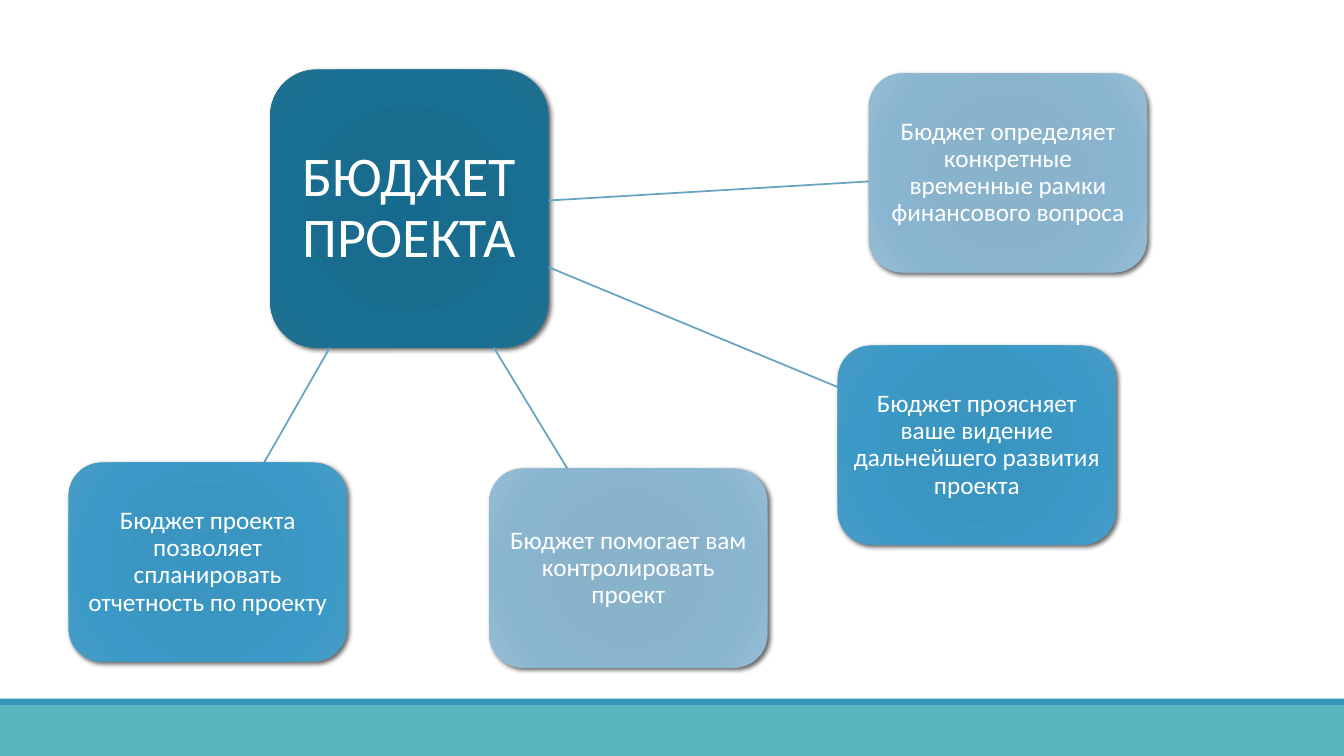
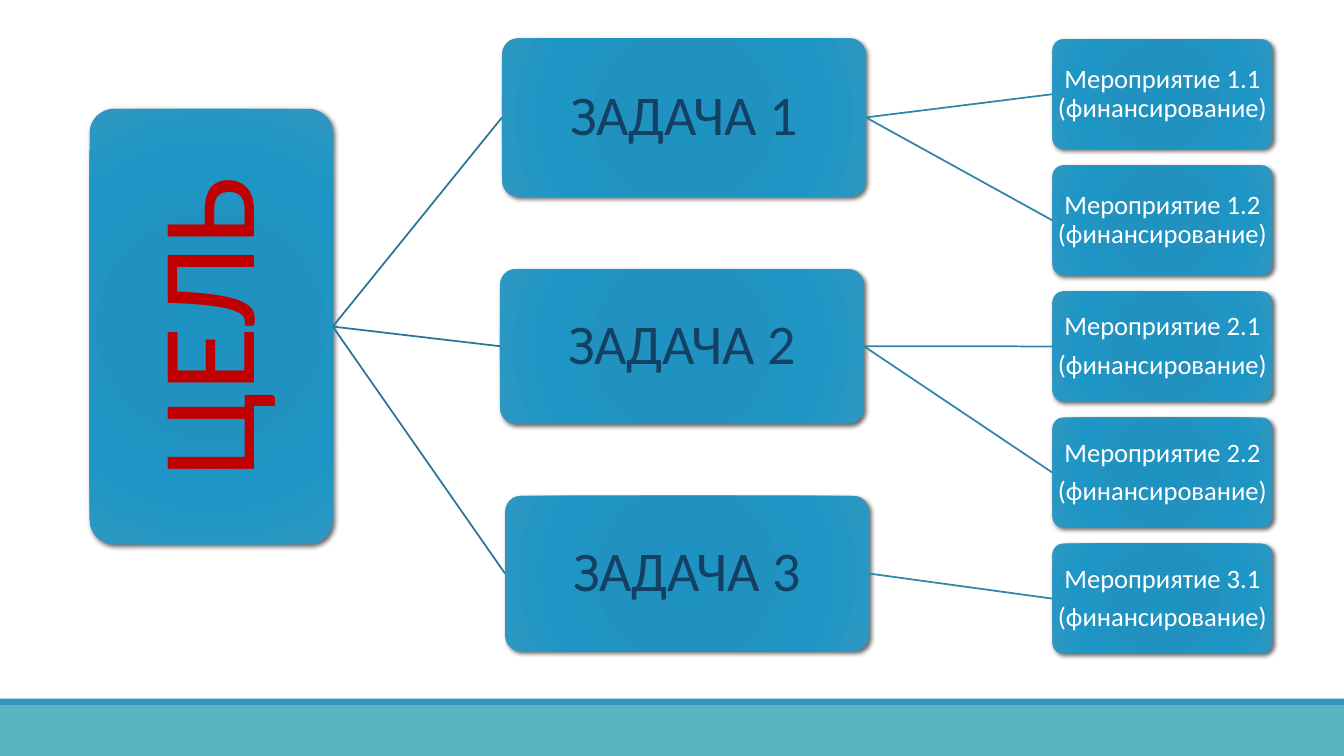
from lxml import etree
from pptx import Presentation
from pptx.dml.color import RGBColor
from pptx.enum.shapes import MSO_CONNECTOR as Link, MSO_SHAPE as Shape
from pptx.enum.text import MSO_ANCHOR as Anchor, PP_ALIGN as Align
from pptx.oxml import parse_xml
from pptx.oxml.ns import nsdecls, qn
from pptx.util import Inches, Pt

FONT = "Calibri"
WHITE = RGBColor(0xFF, 0xFF, 0xFF)
RED = RGBColor(0xC0, 0x00, 0x00)
NAVY = RGBColor(0x13, 0x41, 0x63)
TEAL = RGBColor(0x58, 0xB6, 0xC0)
STRIPE = RGBColor(0x34, 0x94, 0xBA)
PALE_LINE = RGBColor(0x67, 0xA3, 0xC2)
GOAL_LINE = RGBColor(0x2A, 0x77, 0x95)
TASK_LINE = RGBColor(0x2F, 0x86, 0xA9)

STOPS = (0, 34, 70, 100)
DEEP = [RGBColor.from_string(c) for c in ("166C8E", "196C8D", "176F92", "22708F")]
BLUE = [RGBColor.from_string(c) for c in ("3895C2", "3B95C1", "3A99C7", "489CC5")]
PALE = [RGBColor.from_string(c) for c in ("86B1CB", "89B2CB", "89B5D0", "96BCD4")]
TREE = [RGBColor.from_string(c) for c in ("1E92C0", "2192BF", "1E96C5", "2D97C1")]

deck = Presentation()
deck.slide_width, deck.slide_height = Inches(13.33), Inches(7.5)
COL, ROW = deck.slide_width / 100, deck.slide_height / 100


def add_card(slide, place, shades, paragraphs, size, color, inset, corner=1 / 6):
    left, top, width, height = place
    card = slide.shapes.add_shape(Shape.ROUNDED_RECTANGLE, int(left * COL), int(top * ROW),
                                  int(width * COL), int(height * ROW))
    card.adjustments[0] = corner
    card.line.fill.background()
    card.shadow.inherit = False
    stops = "".join(f'<a:gs pos="{at * 1000}"><a:srgbClr val="{shade}"/></a:gs>'
                    for at, shade in zip(STOPS, shades))
    props = card.element.spPr
    props.find(qn("a:prstGeom")).addnext(parse_xml(
        f'<a:gradFill {nsdecls("a")} rotWithShape="1"><a:gsLst>{stops}</a:gsLst><a:path path="circle">'
        '<a:fillToRect l="100000" t="100000" r="100000" b="100000"/></a:path></a:gradFill>'))
    props.find(qn("a:effectLst")).append(parse_xml(
        f'<a:outerShdw {nsdecls("a")} blurRad="{Pt(3.5)}" dist="{Pt(2)}" dir="2700000" '
        'algn="br" rotWithShape="0"><a:srgbClr val="000000"><a:alpha val="60000"/>'
        '</a:srgbClr></a:outerShdw>'))
    frame = card.text_frame
    frame.word_wrap = True
    frame.vertical_anchor = Anchor.MIDDLE
    frame.margin_left = frame.margin_right = Inches(inset)
    frame.margin_top = frame.margin_bottom = Inches(inset)
    for i, words in enumerate(paragraphs):
        para = frame.add_paragraph() if i else frame.paragraphs[0]
        para.alignment = Align.CENTER
        para.line_spacing = 0.9
        para.space_after = Pt(size * 0.35)
        run = para.add_run()
        run.text = words
        run.font.name, run.font.size = FONT, Pt(size)
        run.font.color.rgb = color
    return card


def add_link(slide, color, start=(0, 0), end=(0, 0)):
    link = slide.shapes.add_connector(Link.STRAIGHT, int(start[0] * COL), int(start[1] * ROW),
                                      int(end[0] * COL), int(end[1] * ROW))
    link.line.color.rgb = color
    link.line.width = Pt(1.25)
    etree.SubElement(link.element.spPr, qn("a:effectLst"))
    return link


blank = deck.slide_layouts[6]
budget = deck.slides.add_slide(blank)
plan = deck.slides.add_slide(blank)

for number, (top, height, color) in enumerate([(93.33, 6.67, TEAL), (92.4, 0.93, STRIPE)]):
    band = budget.shapes.add_shape(Shape.RECTANGLE, 0, int(top * ROW),
                                   deck.slide_width, int(height * ROW))
    band.fill.solid()
    band.fill.fore_color.rgb = color
    band.line.fill.background()
    band.shadow.inherit = False
    band.element.nvSpPr.cNvPr.id = 100 + number
    deck.slide_master.shapes.element.append(band.element)

CARD_W, CARD_H = 20.7, 26.3
add_card(budget, (20.1, 9.2, CARD_W, 36.8), DEEP, ["БЮДЖЕТ ПРОЕКТА"], 40, WHITE, 0.11)
reasons = [
    ((62.33, 45.73), BLUE, (40.8, 35.33), (62.33, 51.2),
     "Бюджет проясняет ваше видение дальнейшего развития проекта"),
    ((64.65, 9.73), PALE, (40.8, 26.53), (64.65, 24),
     "Бюджет определяет конкретные временные рамки финансового вопроса"),
    ((36.4, 62), PALE, (36.75, 46), (42.22, 62),
     "Бюджет помогает вам контролировать проект"),
    ((5.1, 61.2), BLUE, (24.53, 46), (19.65, 61.2),
     "Бюджет проекта позволяет спланировать отчетность по проекту"),
]
for corner, shades, start, end, words in reasons:
    add_link(budget, PALE_LINE, start, end)
    add_card(budget, (*corner, CARD_W, CARD_H), shades, [words], 18, WHITE, 0.05)

goal = add_card(plan, (6.68, 14.4, 18.08, 57.6), TREE, ["ЦЕЛЬ"], 96, RED, 0.07, 0.1)
goal.text_frame._txBody.bodyPr.set("vert", "vert270")
FUNDING = "(финансирование)"
tasks = [
    ("ЗАДАЧА 1", (37.35, 5.07, 27.08, 20.93),
     [[f"Мероприятие 1.1 {FUNDING}"], [f"Мероприятие 1.2 {FUNDING}"]]),
    ("ЗАДАЧА 2", (37.2, 35.6, 27.08, 20.4),
     [["Мероприятие 2.1", FUNDING], ["Мероприятие 2.2", FUNDING]]),
    ("ЗАДАЧА 3", (37.58, 65.6, 27.08, 20.53), [["Мероприятие 3.1", FUNDING]]),
]
EVENT_TOP, EVENT_STEP = 5.2, 16.68
event_row = 0
for name, place, events in tasks:
    task = add_card(plan, place, TREE, [name], 40, NAVY, 0.03, 0.1)
    branch = add_link(plan, GOAL_LINE)
    branch.begin_connect(goal, 3)
    branch.end_connect(task, 1)
    for lines in events:
        event = add_card(plan, (78.3, EVENT_TOP + event_row * EVENT_STEP, 16.38, 14.53),
                         TREE, lines, 19, WHITE, 0.01, 0.1)
        twig = add_link(plan, TASK_LINE)
        twig.begin_connect(task, 3)
        twig.end_connect(event, 1)
        event_row += 1

deck.save("out.pptx")
